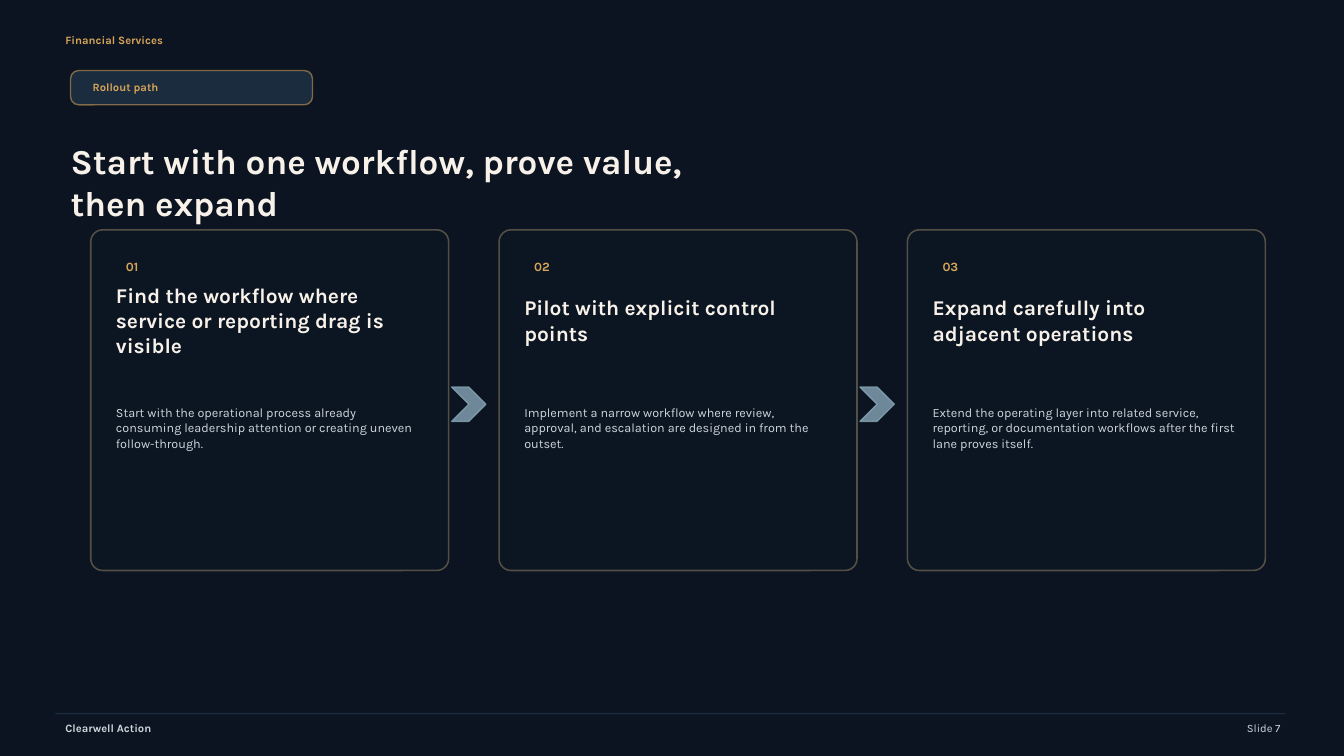
"""Build the rollout path slide: three cards joined by chevrons."""
import pptx
import pptx.util
import pptx.dml.color
import pptx.enum.shapes
import pptx.enum.text
import pptx.oxml.ns
import lxml.etree

RGBColor = pptx.dml.color.RGBColor
Shape = pptx.enum.shapes.MSO_SHAPE
Align = pptx.enum.text.PP_ALIGN
qn = pptx.oxml.ns.qn

PX = 9144
NIGHT = RGBColor(0x0B, 0x14, 0x20)
NAVY = RGBColor(0x20, 0x32, 0x47)
CARD = RGBColor(0x18, 0x26, 0x38)
GOLD = RGBColor(0xD7, 0xA5, 0x5A)
SAND = RGBColor(0xEA, 0xC7, 0x8E)
STEEL = RGBColor(0x87, 0xA6, 0xB8)
CREAM = RGBColor(0xF7, 0xF1, 0xE9)
MIST = RGBColor(0xCD, 0xD6, 0xDC)


def write(box, text, size, color, bold=False, inset=True, align=Align.LEFT):
    """Put one formatted run into a box."""
    frame = box.text_frame
    frame.word_wrap = True
    frame.auto_size = pptx.enum.text.MSO_AUTO_SIZE.NONE
    frame.vertical_anchor = pptx.enum.text.MSO_ANCHOR.MIDDLE
    frame.margin_left = frame.margin_right = 10 * PX if inset else 0
    frame.margin_top = frame.margin_bottom = 5 * PX if inset else 0
    para = frame.paragraphs[0]
    para.alignment = align
    span = para.add_run()
    span.text = text
    span.font.name = "Karla"
    span.font.size = pptx.util.Pt(size)
    span.font.bold = bold
    span.font.color.rgb = color


def paint(shape, line, line_alpha, width=1, fill=None, fill_alpha=100):
    """Set line and fill with their opacity in percent."""
    shape.line.color.rgb = line
    shape.line.width = pptx.util.Pt(width)
    parts = [(shape.line.color, shape.line._get_or_add_ln(), line_alpha)]
    if fill is not None:
        shape.shadow.inherit = False
        shape.fill.solid()
        shape.fill.fore_color.rgb = fill
        parts.append((shape.fill.fore_color, shape._element.spPr, fill_alpha))
    for _, holder, alpha in parts:
        color = holder.find(qn("a:solidFill")).find(qn("a:srgbClr"))
        lxml.etree.SubElement(color, qn("a:alpha"), val=str(alpha * 1000))


deck = pptx.Presentation()
deck.slide_width = 1333 * PX
deck.slide_height = 750 * PX
page = deck.slides.add_slide(deck.slide_layouts[5])
page.background.fill.solid()
page.background.fill.fore_color.rgb = NIGHT
shapes = page.shapes

title = shapes.title
title.left, title.top, title.width, title.height = 70 * PX, 105 * PX, 610 * PX, 150 * PX
write(title, "Start with one workflow, prove value, then expand", 25, CREAM, True, False)

badge = shapes.add_shape(Shape.ROUNDED_RECTANGLE, 70 * PX, 70 * PX, 240 * PX, 34 * PX)
badge.adjustments[0] = 0.235
paint(badge, GOLD, 55, 1, NAVY, 82)

labels = [
    (55, 30, 320, 20, "Financial Services", GOLD, True, Align.LEFT),
    (82, 78, 216, 16, "Rollout path", GOLD, True, Align.LEFT),
    (55, 712, 220, 20, "Clearwell Action", MIST, True, Align.LEFT),
    (1050, 712, 230, 20, "Slide 7", MIST, False, Align.RIGHT),
]
for left, top, width, height, text, color, bold, align in labels:
    box = shapes.add_textbox(left * PX, top * PX, width * PX, height * PX)
    write(box, text, 8, color, bold, align=align)

steps = [
    ("Find the workflow where service or reporting drag is visible",
     "Start with the operational process already consuming leadership attention "
     "or creating uneven follow-through."),
    ("Pilot with explicit control points",
     "Implement a narrow workflow where review, approval, and escalation "
     "are designed in from the outset."),
    ("Expand carefully into adjacent operations",
     "Extend the operating layer into related service, reporting, or documentation "
     "workflows after the first lane proves itself."),
]
for index, (heading, detail) in enumerate(steps):
    left = 90 + 405 * index
    card = shapes.add_shape(Shape.ROUNDED_RECTANGLE, left * PX, 228 * PX, 355 * PX, 338 * PX)
    card.adjustments[0] = 0.035
    paint(card, SAND, 32, 1.1, CARD, 12)
    texts = [
        (255, 50, 18, f"{index + 1:02d}", 9, GOLD, True, True),
        (290, 290, 55, heading, 15, CREAM, True, False),
        (362, 300, 125, detail, 9, MIST, False, False),
    ]
    for top, width, height, text, size, color, bold, inset in texts:
        box = shapes.add_textbox((left + 25) * PX, top * PX, width * PX, height * PX)
        write(box, text, size, color, bold, inset)
    if index < len(steps) - 1:
        chevron = shapes.add_shape(Shape.CHEVRON, (left + 358) * PX, 384 * PX, 34 * PX, 34 * PX)
        paint(chevron, STEEL, 80, 1, STEEL, 80)

rule = shapes.add_connector(
    pptx.enum.shapes.MSO_CONNECTOR.STRAIGHT, 55 * PX, 708 * PX, 1275 * PX, 708 * PX)
paint(rule, NAVY, 80)
lxml.etree.SubElement(rule._element.spPr, qn("a:effectLst"))

deck.save("out.pptx")
